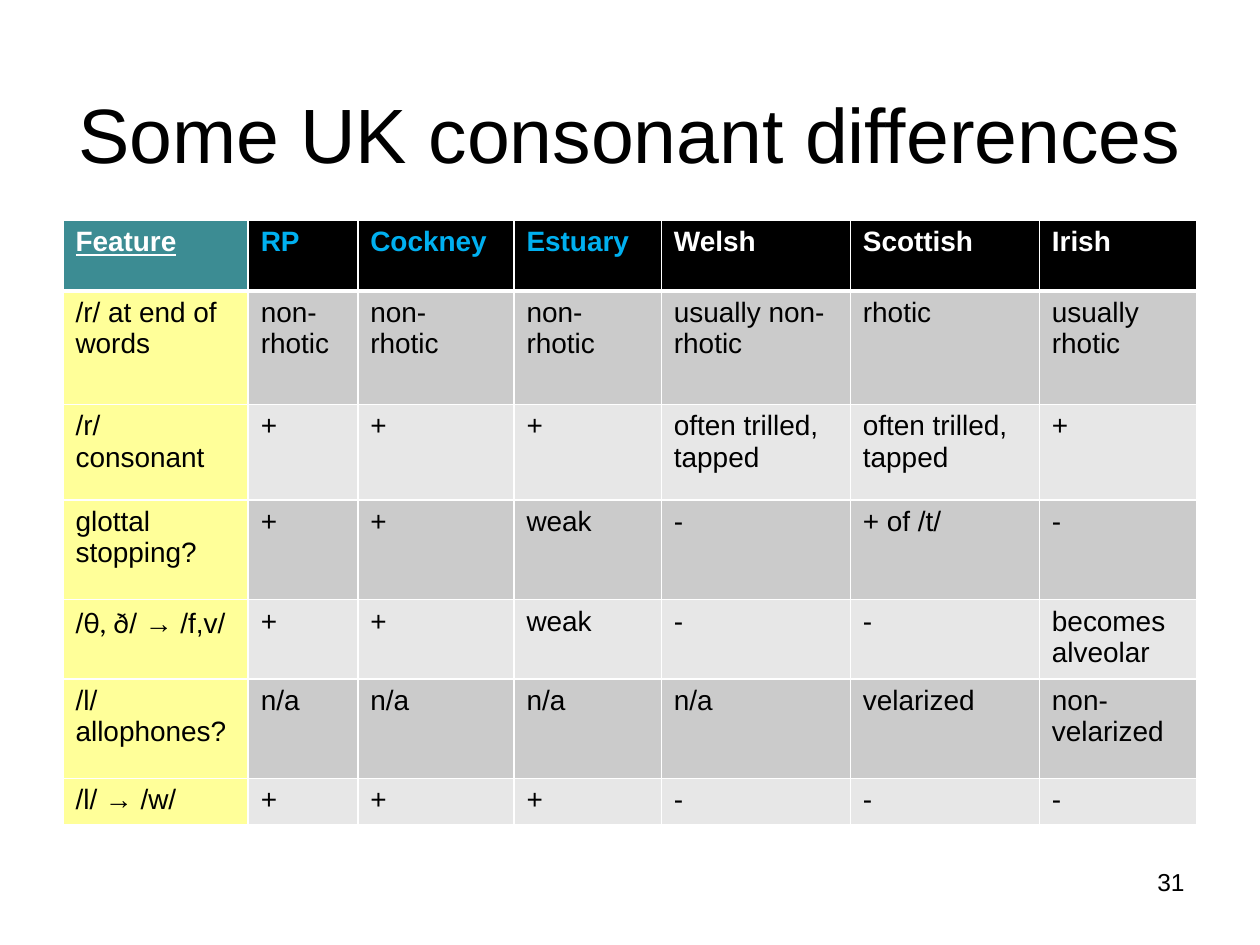
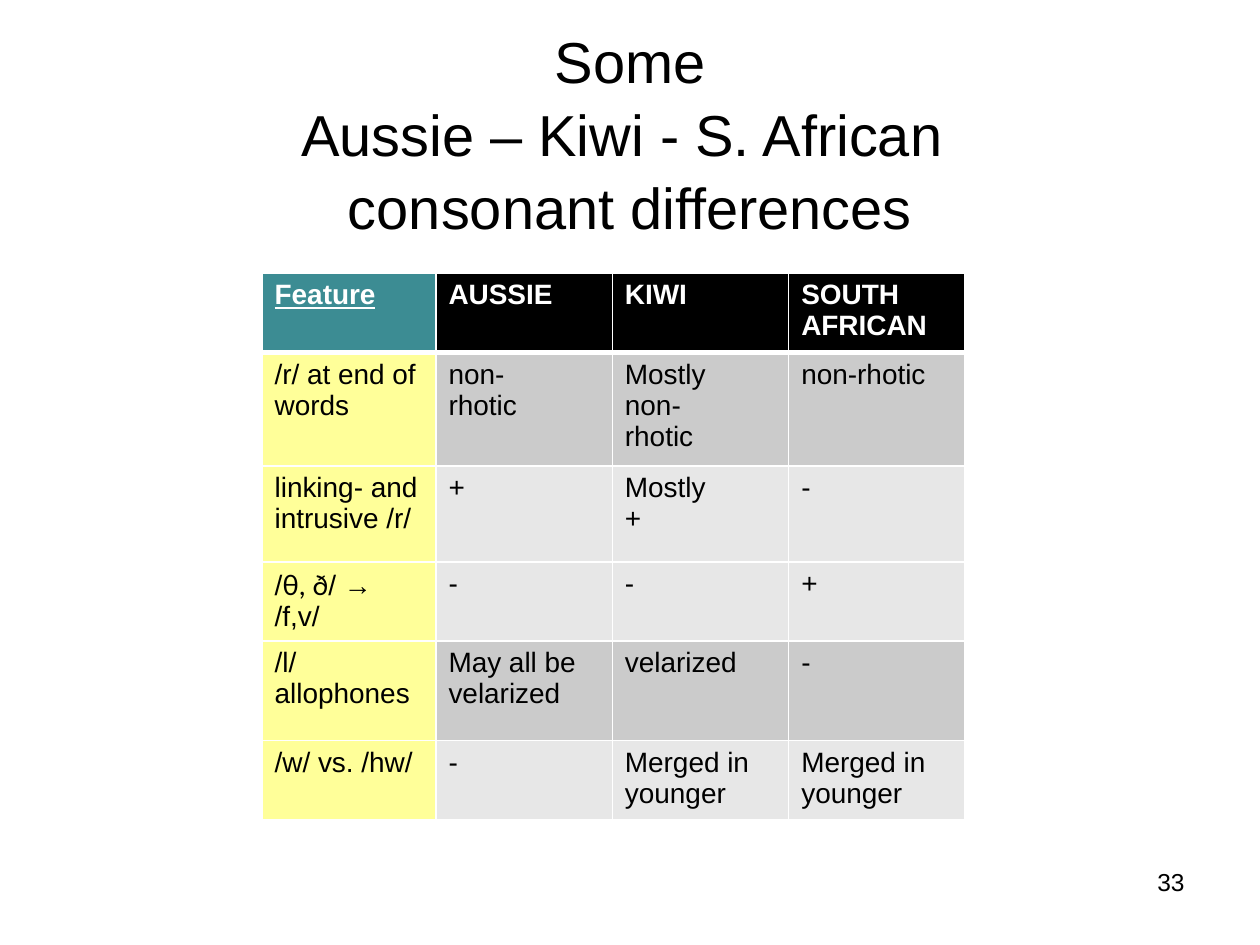
from lxml import etree
from pptx import Presentation
from pptx import util as u
from pptx.dml import color
from pptx.enum import text
from pptx.oxml import ns

FONT, PHONETIC_FONT = "Arial", "Lato"
BLACK, WHITE, BLUE = "000000", "FFFFFF", "00B0F0"
TEAL, YELLOW, DARK, LIGHT = "3C8C93", "FFFF99", "CBCBCB", "E7E7E7"
PHONETIC_SHIFT = "/|θ, ð|/ → /f,v/"

UK_ROWS = [
    ["Feature", "RP", "Cockney", "Estuary", "Welsh", "Scottish", "Irish"],
    ["/r/ at end of words", "non-rhotic", "non-\nrhotic", "non-rhotic",
     "usually non-rhotic", "rhotic", "usually rhotic"],
    ["/r/ consonant", "+", "+", "+", "often trilled, tapped", "often trilled, tapped", "+"],
    ["glottal stopping?", "+", "+", "weak", "-", "+ of /t/", "-"],
    [PHONETIC_SHIFT, "+", "+", "weak", "-", "-", "becomes alveolar"],
    ["/l/ allophones?", "n/a", "n/a", "n/a", "n/a", "velarized", "non-velarized"],
    ["/l/ → /w/", "+", "+", "+", "-", "-", "-"],
]
SOUTHERN_ROWS = [
    ["Feature", "AUSSIE", "KIWI", "SOUTH\nAFRICAN"],
    ["/r/ at end of words", "non-\nrhotic", "Mostly\nnon-\nrhotic", "non-rhotic"],
    ["linking- and intrusive /r/", "+", "Mostly\n+", "-"],
    [PHONETIC_SHIFT, "-", "-", "+"],
    ["/l/ allophones", "May all be velarized", "velarized", "-"],
    ["/w/ vs. /hw/", "-", "Merged in younger", "Merged in younger"],
]


def rgb(value):
    return color.RGBColor.from_string(value)


class Deck:
    """Builds slides in one style; lengths are percentages of the slide's size."""

    def __init__(self):
        self.presentation = Presentation()
        self.presentation.slide_width = u.Inches(10)
        self.presentation.slide_height = u.Inches(7.5)
        self.slide = None

    def across(self, percent):
        return round(self.presentation.slide_width * percent / 100)

    def down(self, percent):
        return round(self.presentation.slide_height * percent / 100)

    def box(self, left, top, width, height):
        return self.across(left), self.down(top), self.across(width), self.down(height)

    def new_slide(self):
        layout = self.presentation.slide_layouts[5]
        self.slide = self.presentation.slides.add_slide(layout)

    def fill_text(self, frame, content, size, ink=BLACK, bold=False, underline=False,
                  align=text.PP_ALIGN.LEFT, spacing=1.0):
        frame.word_wrap = True
        for index, line in enumerate(content.split("\n")):
            paragraph = frame.add_paragraph() if index else frame.paragraphs[0]
            paragraph.alignment = align
            paragraph.line_spacing = spacing
            for position, piece in enumerate(line.split("|")):
                run = paragraph.add_run()
                run.text = piece
                run.font.name = PHONETIC_FONT if position % 2 else FONT
                run.font.size = u.Pt(size)
                run.font.bold = bold
                run.font.underline = underline
                run.font.color.rgb = rgb(ink)

    def title(self, content, size, inset, spacing=1.0):
        shape = self.slide.shapes.title
        shape.left, shape.top, shape.width, shape.height = self.box(5, 0, 90, 16.67)
        frame = shape.text_frame
        frame.auto_size = text.MSO_AUTO_SIZE.NONE
        frame.vertical_anchor = text.MSO_ANCHOR.TOP
        frame.margin_left = frame.margin_right = frame.margin_bottom = 0
        frame.margin_top = self.down(inset)
        self.fill_text(frame, content, size, align=text.PP_ALIGN.CENTER, spacing=spacing)

    def page_number(self, number):
        shape = self.slide.shapes.add_textbox(*self.box(71.7, 91.07, 23.3, 6.93))
        self.fill_text(shape.text_frame, str(number), 14, align=text.PP_ALIGN.RIGHT)

    def border(self, cell, **widths):
        properties = cell._tc.get_or_add_tcPr()
        for side in "LRTB":
            line = etree.SubElement(properties, ns.qn(f"a:ln{side}"),
                                    w=str(u.Pt(widths.get(side, 1))))
            fill = etree.SubElement(line, ns.qn("a:solidFill"))
            etree.SubElement(fill, ns.qn("a:srgbClr"), val=WHITE)

    def table(self, left, top, widths, heights, rows, shades, blue_heads=()):
        place = self.box(left, top, sum(widths), sum(heights))
        table = self.slide.shapes.add_table(len(rows), len(widths), *place).table
        table.first_row = table.horz_banding = False
        for column, width in zip(table.columns, widths):
            column.width = self.across(width)
        for row, height in zip(table.rows, heights):
            row.height = self.down(height)
        for row_index, contents in enumerate(rows):
            head = row_index == 0
            edges = {0: {"B": 3}, 1: {"T": 3}}.get(row_index, {})
            for column_index, content in enumerate(contents):
                feature = column_index == 0
                cell = table.cell(row_index, column_index)
                self.border(cell, **edges)
                if head:
                    fill = TEAL if feature else BLACK
                    ink = BLUE if content in blue_heads else WHITE
                else:
                    fill = YELLOW if feature else shades[row_index - 1]
                    ink = BLACK
                cell.fill.solid()
                cell.fill.fore_color.rgb = rgb(fill)
                self.fill_text(cell.text_frame, content, 16, ink, head, head and feature)


def main():
    deck = Deck()

    deck.new_slide()
    deck.title("Some UK consonant differences", 44, inset=9.2)
    deck.table(5, 23.33, [14.7, 8.7, 12.4, 11.7, 15, 15, 12.5],
               [7.47, 12, 10.13, 10.53, 8.4, 10.53, 4.93],
               UK_ROWS, [DARK, LIGHT] * 3, ("RP", "Cockney", "Estuary"))
    deck.page_number(31)

    deck.new_slide()
    deck.title("Some\nAussie – Kiwi - S. African \nconsonant differences", 33,
               inset=2.4, spacing=1.05)
    deck.table(20.8, 28.93, [13.8] + [14] * 3, [8.4, 12, 10.13, 8.4, 10.53, 8.4],
               SOUTHERN_ROWS, [DARK, LIGHT, LIGHT, DARK, LIGHT])
    deck.page_number(33)

    deck.presentation.save("out.pptx")


if __name__ == "__main__":
    main()
